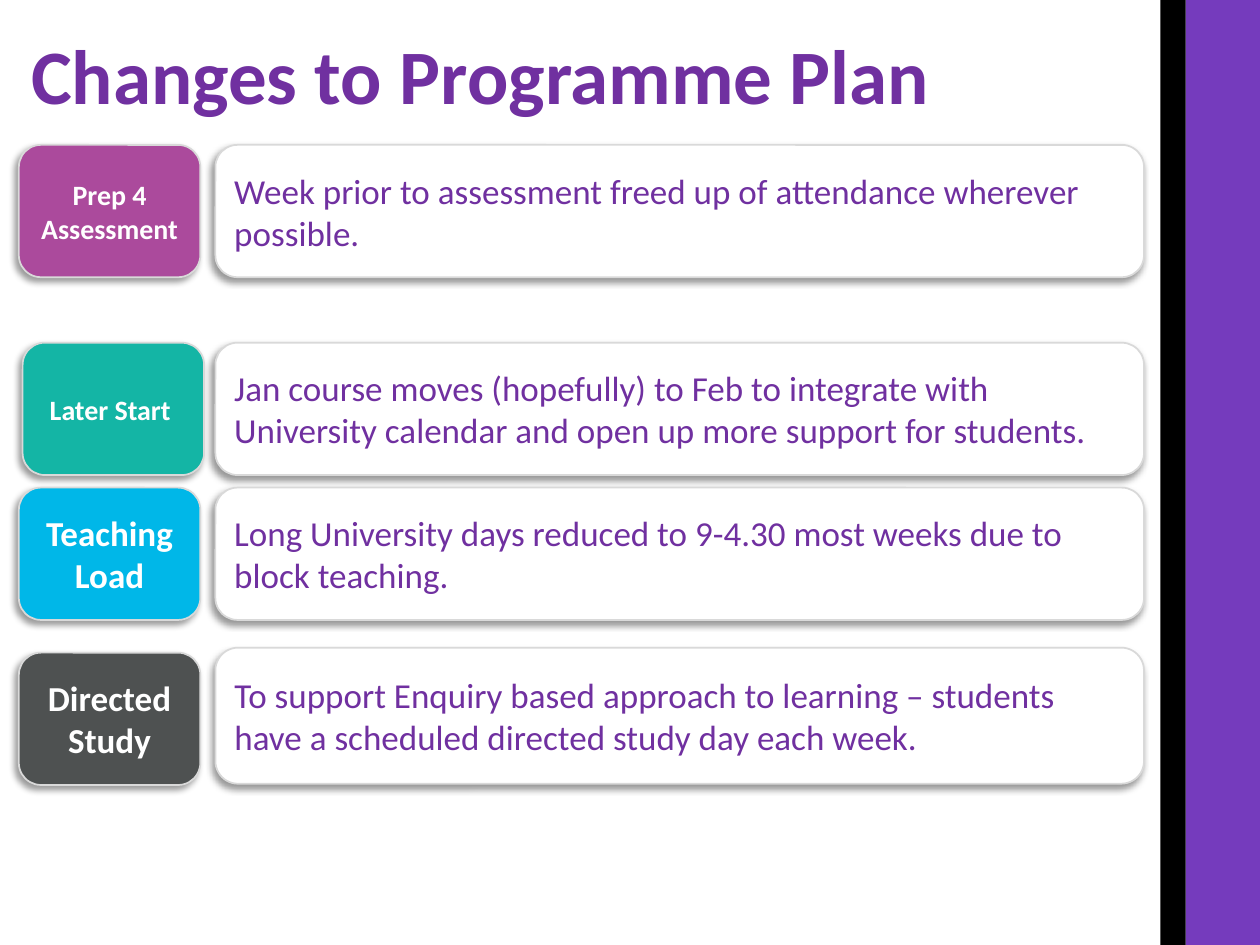
from lxml import etree
from pptx import Presentation, util as u
from pptx.dml import color
from pptx.enum import shapes, text
from pptx.oxml import ns

WIDE, HIGH = 10, 7.5
FONT = "Calibri"
PURPLE, WHITE, EDGE = "7030A0", "FFFFFF", "D9D9D9"

deck = Presentation()
deck.slide_width, deck.slide_height = u.Inches(WIDE), u.Inches(HIGH)
slide = deck.slides.add_slide(deck.slide_layouts[6])


def paint(item, tone):
    """Give a fill or a line one solid colour."""
    item.solid()
    item.fore_color.rgb = color.RGBColor.from_string(tone)


def write(shape, words, size, tone, bold=False, align=text.PP_ALIGN.LEFT):
    """Put one wrapped paragraph into a shape."""
    frame = shape.text_frame
    frame.word_wrap = True
    para = frame.paragraphs[0]
    para.alignment = align
    run = para.add_run()
    run.text = words
    run.font.name, run.font.size, run.font.bold = FONT, u.Pt(size), bold
    paint(run.font.fill, tone)
    return para


# Side bands
for left, wide, tone in ((9.41, 0.59, "753BBD"), (9.21, 0.2, "000000")):
    band = slide.shapes.add_shape(
        shapes.MSO_SHAPE.RECTANGLE, u.Inches(left), 0, u.Inches(wide), u.Inches(HIGH))
    band.shadow.inherit = False
    paint(band.fill, tone)
    band.line.fill.background()

# Title
title = slide.shapes.add_textbox(
    u.Inches(0.15), u.Inches(0.17), u.Inches(8.67), u.Inches(1.42))
write(title, "Changes to Programme Plan", 44, PURPLE, True).space_after = u.Pt(8)

# Rows: a coloured label beside a white card
LABEL, CARD, TALL = 1.44, 7.37, 1.05
CARD_X = 1.71
MID, LEFT = text.PP_ALIGN.CENTER, text.PP_ALIGN.LEFT
# label left, label top, card top, card height, tone, label size, label, card text
rows = (
    (0.15, 1.15, 1.15, TALL, "AB4A9C", 16, "Prep 4 Assessment",
     "Week prior to assessment freed up of attendance wherever possible."),
    (0.18, 2.72, 2.72, TALL, "14B5A5", 16, "Later Start ",
     "Jan course moves (hopefully) to Feb to integrate with University calendar "
     "and open up more support for students."),
    (0.15, 3.87, 3.87, TALL, "00B7E8", 20, "Teaching Load",
     "Long University days reduced to 9-4.30 most weeks due to block teaching."),
    (0.15, 5.18, 5.14, 1.08, "4E5151", 20, "Directed Study",
     "To support Enquiry based approach to learning – students have a scheduled "
     "directed study day each week."),
)
for left, top, card_y, card_h, tone, size, label, words in rows:
    group = slide.shapes.add_group_shape()
    parts = (
        (left, top, LABEL, TALL, tone, label, size, WHITE, True, MID),
        (CARD_X, card_y, CARD, card_h, WHITE, words, 20, PURPLE, False, LEFT),
    )
    for x, y, wide, high, fill, *style in parts:
        box = group.shapes.add_shape(
            shapes.MSO_SHAPE.ROUNDED_RECTANGLE,
            u.Inches(x), u.Inches(y), u.Inches(wide), u.Inches(high))
        paint(box.fill, fill)
        paint(box.line.fill, EDGE)
        box.line.width = u.Pt(1)
        box.text_frame.vertical_anchor = text.MSO_ANCHOR.MIDDLE
        write(box, *style)

        # Soft shadow to the lower left
        box.shadow.inherit = False
        glow = box._element.spPr.find(ns.qn("a:effectLst"))
        cast = etree.SubElement(
            glow, ns.qn("a:outerShdw"), blurRad=str(u.Pt(4)), dist=str(u.Pt(3)),
            dir=str(135 * 60000), algn="tr", rotWithShape="0")
        shade = etree.SubElement(cast, ns.qn("a:srgbClr"), val="000000")
        etree.SubElement(shade, ns.qn("a:alpha"), val="40000")

deck.save("out.pptx")
